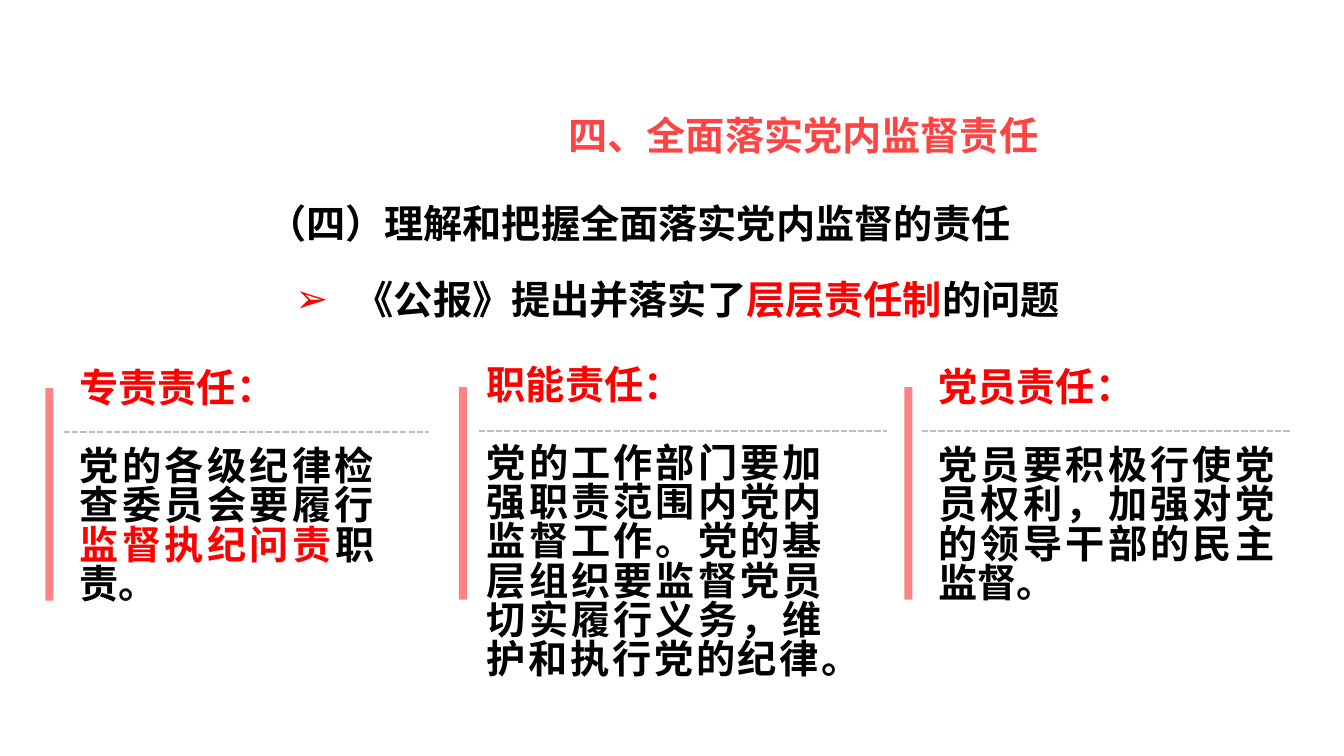
from dataclasses import dataclass

from lxml.etree import SubElement
from pptx import Presentation
from pptx.dml.color import RGBColor
from pptx.enum.dml import MSO_LINE
from pptx.enum.shapes import MSO_CONNECTOR, MSO_SHAPE
from pptx.enum.text import MSO_AUTO_SIZE as AutoSize, PP_ALIGN
from pptx.oxml.ns import qn
from pptx.util import Emu, Pt

PX = 9144  # 100 px to the inch
COLORS = {
    "title": "FE4444",
    "black": "000000",
    "red": "FF0000",
    "bar": "FF8383",
    "rule": "BFBFBF",
}
CJK_FONT = "Noto Sans CJK SC"
BODY_FONT = "Arial"
TEXT_SIZE = Pt(28)

Spans = list[tuple[str, str]]  # (text, colour name)


@dataclass
class Heading:
    left: int
    top: int
    width: int
    spans: Spans
    bulleted: bool = False


@dataclass
class Duty:
    bar_left: int
    bar_top: int
    rule_left: int
    rule_right: int
    text_left: int
    text_top: int
    text_width: int
    name: str
    body: Spans


HEADINGS = [
    Heading(554, 106, 620, [("四、全面落实党内监督责任", "title")]),
    Heading(215, 268, 1039, [
        ("《公报》提出并落实了", "black"),
        ("层层责任制", "red"),
        ("的问题", "black"),
    ], bulleted=True),
    Heading(255, 193, 911, [("（四）理解和把握全面落实党内监督的责任", "black")]),
]

DUTIES = [
    Duty(45, 385, 63, 425, 69, 363, 312, "专责责任：", [
        ("党的各级纪律检查委员会要履行", "black"),
        ("监督执纪问责", "red"),
        ("职责。", "black"),
    ]),
    Duty(455, 384, 475, 880, 473, 360, 352, "职能责任：", [
        ("党的工作部门要加强职责范围内党内监督工作。"
         "党的基层组织要监督党员切实履行义务，维护和执行党的纪律。", "black"),
    ]),
    Duty(897, 384, 914, 1279, 921, 362, 353, "党员责任：", [
        ("党员要积极行使党员权利，加强对党的领导干部的民主监督。", "black"),
    ]),
]


def px(length: int) -> Emu:
    return Emu(length * PX)


def color(name: str) -> RGBColor:
    return RGBColor.from_string(COLORS[name])


def add_box(shapes, left: int, top: int, width: int, height: int, auto_size):
    box = shapes.add_textbox(px(left), px(top), px(width), px(height))
    box.text_frame.word_wrap = True
    box.text_frame.auto_size = auto_size
    return box.text_frame


def write(para, spans: Spans, font_name: str = CJK_FONT) -> None:
    para.font.name = font_name
    para.font.size = TEXT_SIZE
    para.font.bold = True
    SubElement(para.font._element, qn("a:ea")).set("typeface", CJK_FONT)
    for text, color_name in spans:
        span = para.add_run()
        span.text = text
        span.font.color.rgb = color(color_name)


def add_bullet(para) -> None:
    properties = para._p.get_or_add_pPr()
    properties.set("marL", str(px(127)))
    properties.set("indent", str(px(-59)))
    bullet_color = SubElement(properties, qn("a:buClr"))
    SubElement(bullet_color, qn("a:srgbClr")).set("val", COLORS["red"])
    SubElement(properties, qn("a:buFont")).set("typeface", BODY_FONT)
    SubElement(properties, qn("a:buChar")).set("char", "➢")


def add_heading(shapes, heading: Heading) -> None:
    frame = add_box(shapes, heading.left, heading.top, heading.width, 57,
                    AutoSize.SHAPE_TO_FIT_TEXT)
    para = frame.paragraphs[0]
    if heading.bulleted:
        add_bullet(para)
    write(para, heading.spans)


def add_duty(shapes, duty: Duty) -> None:
    # Vertical bar
    bar = shapes.add_shape(MSO_SHAPE.RECTANGLE, px(duty.bar_left),
                           px(duty.bar_top), px(8), px(211))
    bar.shadow.inherit = False
    bar.fill.solid()
    bar.fill.fore_color.rgb = color("bar")
    bar.line.fill.background()

    # Dashed rule
    rule_top = px(duty.bar_top + 44)
    rule = shapes.add_connector(MSO_CONNECTOR.STRAIGHT, px(duty.rule_left),
                                rule_top, px(duty.rule_right), rule_top)
    rule.line.color.rgb = color("rule")
    rule.line.width = Pt(1.5)
    rule.line.dash_style = MSO_LINE.SQUARE_DOT
    SubElement(rule._element.spPr, qn("a:effectLst"))

    # Name and description
    frame = add_box(shapes, duty.text_left, duty.text_top, duty.text_width,
                    350, AutoSize.NONE)
    name, body = frame.paragraphs[0], frame.add_paragraph()
    for para in (name, body):
        para.alignment = PP_ALIGN.JUSTIFY
        para.line_spacing = TEXT_SIZE
    name.space_after = TEXT_SIZE
    write(name, [(duty.name, "red")])
    write(body, duty.body, BODY_FONT)


def main() -> None:
    deck = Presentation()
    deck.slide_width, deck.slide_height = px(1333), px(750)
    page = deck.slides.add_slide(deck.slide_layouts[6])
    for heading in HEADINGS:
        add_heading(page.shapes, heading)
    for duty in DUTIES:
        add_duty(page.shapes.add_group_shape().shapes, duty)
    deck.save("out.pptx")


if __name__ == "__main__":
    main()
